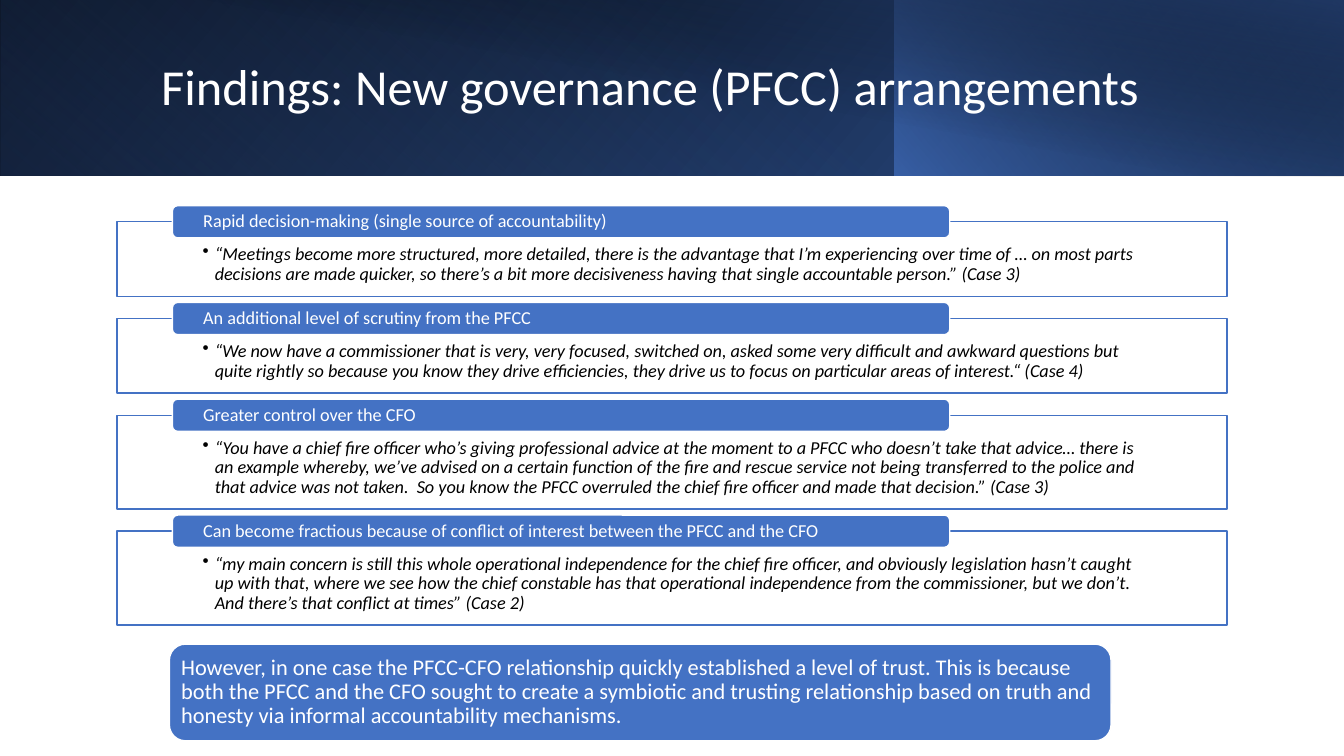
from lxml import etree
from pptx import Presentation
from pptx import util as u
from pptx.dml.color import RGBColor
from pptx.enum import shapes, text
from pptx.oxml.ns import qn

PX = 9144  # one hundredth of an inch
WIDE, HIGH = 1333, 750

WHITE = RGBColor(0xFF, 0xFF, 0xFF)
BLACK = RGBColor(0, 0, 0)
BLUE = RGBColor(0x44, 0x72, 0xC4)
DEEP = RGBColor(0x2F, 0x55, 0x97)
NAVY = RGBColor(0x20, 0x38, 0x64)

RECT = shapes.MSO_SHAPE.RECTANGLE
ROUND = shapes.MSO_SHAPE.ROUNDED_RECTANGLE

TITLE = "Findings: New governance (PFCC) arrangements"
# heading, quote, height of the quote box
FINDINGS = [
    ("Rapid decision-making (single source of accountability)",
     "“Meetings become more structured, more detailed, there is the advantage "
     "that I’m experiencing over time of … on most parts decisions are made "
     "quicker, so there’s a bit more decisiveness having that single "
     "accountable person.” (Case 3)", 74),
    ("An additional level of scrutiny from the PFCC",
     "“We now have a commissioner that is very, very focused, switched on, "
     "asked some very difficult and awkward questions but quite rightly so "
     "because you know they drive efficiencies, they drive us to focus on "
     "particular areas of interest.“ (Case 4)", 74),
    ("Greater control over the CFO",
     "“You have a chief fire officer who’s giving professional advice at the "
     "moment to a PFCC who doesn’t take that advice… there is an example "
     "whereby, we’ve advised on a certain function of the fire and rescue "
     "service not being transferred to the police and that advice was not "
     "taken.  So you know the PFCC overruled the chief fire officer and made "
     "that decision.” (Case 3)", 93),
    ("Can become fractious because of conflict of interest between the PFCC "
     "and the CFO",
     "“my main concern is still this whole operational independence for the "
     "chief fire officer, and obviously legislation hasn’t caught up with "
     "that, where we see how the chief constable has that operational "
     "independence from the commissioner, but we don’t.  And there’s that "
     "conflict at times” (Case 2)", 93),
]
CLOSING = (
    "However, in one case the PFCC-CFO relationship quickly established a "
    "level of trust. This is because both the PFCC and the CFO sought to "
    "create a symbiotic and trusting relationship based on truth and honesty "
    "via informal accountability mechanisms.")


class Deck:
    font = "Calibri"

    def __init__(self):
        self.prs = Presentation()
        self.prs.slide_width = WIDE * PX
        self.prs.slide_height = HIGH * PX
        self.slide = self.prs.slides.add_slide(self.prs.slide_layouts[6])

    def shape(self, kind, box):
        item = self.slide.shapes.add_shape(kind, *(n * PX for n in box))
        item.shadow.inherit = False
        return item

    def fade(self, box, stops, angle, flip=True, turn=0):
        """Add a two-stop gradient; a stop is (position %, colour, opacity %)."""
        item = self.shape(RECT, box)
        item.line.fill.background()
        item.rotation = turn
        if flip:
            item._element.spPr.find(qn("a:xfrm")).set("flipH", "1")
        item.fill.gradient()
        item.fill.gradient_angle = 360 - angle
        for stop, (place, color, _) in zip(item.fill.gradient_stops, stops):
            stop.position = place / 100
            stop.color.rgb = color
        tones = item._element.spPr.iter(qn("a:srgbClr"))
        for tone, (_, _, alpha) in zip(list(tones), stops):
            self.alpha(tone, alpha)

    def alpha(self, tone, percent):
        etree.SubElement(tone, qn("a:alpha")).set("val", str(percent * 1000))

    def panel(self, kind, box, fill, line):
        item = self.shape(kind, box)
        item.fill.solid()
        item.fill.fore_color.rgb = fill
        item.line.color.rgb = line
        item.line.width = u.Pt(1)
        return item

    def letter(self, item, words, size, color, pads, middle=True):
        """Fill the text frame; pads are left, top, right and bottom."""
        frame = item.text_frame
        frame.text = words
        frame.word_wrap = True
        anchor = text.MSO_ANCHOR
        frame.vertical_anchor = anchor.MIDDLE if middle else anchor.TOP
        (frame.margin_left, frame.margin_top,
         frame.margin_right, frame.margin_bottom) = (n * PX for n in pads)
        para = frame.paragraphs[0]
        para.alignment = text.PP_ALIGN.LEFT
        para.line_spacing = 0.9
        font = para.runs[0].font
        font.name = self.font
        font.size = u.Pt(size)
        font.color.rgb = color
        return para

    def title(self, words, box):
        item = self.slide.shapes.add_textbox(*(n * PX for n in box))
        self.letter(item, words, 36, WHITE, (10, 5, 10, 5))

    def quote(self, words, box):
        item = self.panel(RECT, box, WHITE, BLUE)
        self.alpha(next(item._element.spPr.iter(qn("a:srgbClr"))), 90)
        para = self.letter(item, words, 13, BLACK, (85, 23, 85, 10), False)
        para.runs[0].font.italic = True
        props = para._p.get_or_add_pPr()
        props.set("marL", str(12 * PX))
        props.set("indent", str(-12 * PX))
        etree.SubElement(props, qn("a:buChar")).set("char", "•")

    def label(self, words, box, size, pads):
        item = self.panel(ROUND, box, BLUE, WHITE)
        self.letter(item, words, size, WHITE, pads)


def main():
    deck = Deck()

    deck.fade((0, 0, WIDE, 174), [(0, BLACK, 100), (100, DEEP, 100)], 140)
    deck.fade((0, 0, 888, 174), [(20, BLUE, 0), (100, NAVY, 55)], 230,
              turn=180)
    deck.fade((887, 0, 446, 174), [(0, BLUE, 66), (100, BLACK, 30)], 220)
    deck.fade((50, 0, 1283, 175), [(50, BLACK, 0), (99, NAVY, 52)], 280,
              flip=False)
    deck.title(TITLE, (150, 32, 1082, 113))

    top, gap = 220, 22
    for head, words, high in FINDINGS:
        deck.quote(words, (116, top, 1101, high))
        deck.label(head, (171, top - 16, 771, 32), 13, (29, 0, 29, 0))
        top += high + gap

    deck.label(CLOSING, (168, 639, 934, 96), 16, (7, 7, 7, 7))
    deck.prs.save("out.pptx")


if __name__ == "__main__":
    main()
